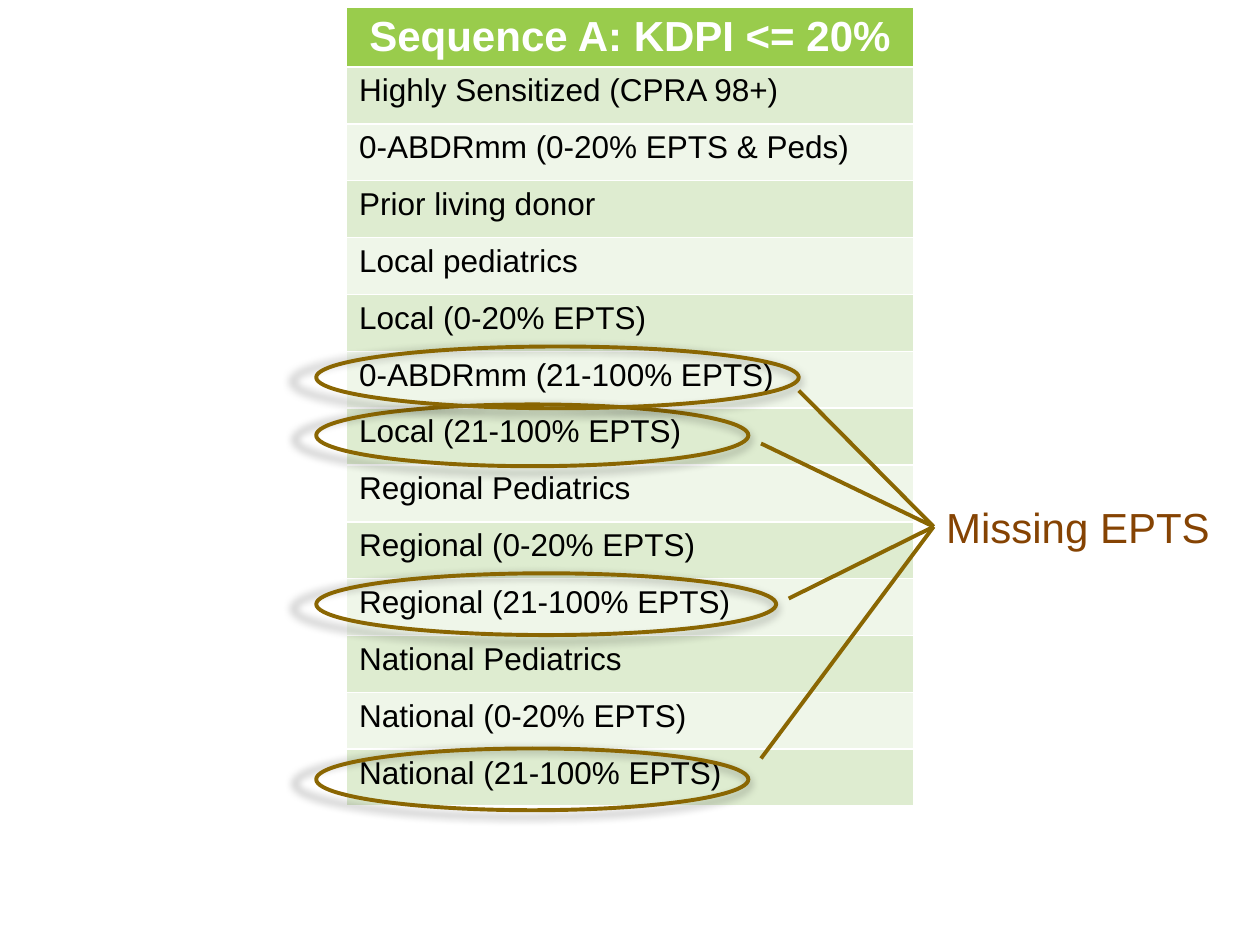
from pptx import Presentation
from pptx.dml.color import RGBColor
from pptx.enum.shapes import MSO_CONNECTOR as Connector, MSO_SHAPE as Shape
from pptx.enum.text import MSO_AUTO_SIZE as AutoSize, PP_ALIGN as Align
from pptx.oxml import parse_xml
from pptx.oxml.ns import nsdecls
from pptx.util import Inches, Pt

WHITE = RGBColor(0xFF, 0xFF, 0xFF)
BLACK = RGBColor(0, 0, 0)
GREEN = RGBColor(0x99, 0xCC, 0x4C)
BANDS = RGBColor(0xDE, 0xEC, 0xD0), RGBColor(0xEF, 0xF6, 0xE9)
GOLD = RGBColor(0x8A, 0x66, 0x02)
BROWN = RGBColor(0x85, 0x43, 0x03)
FONT = "Arial"

HEADER = "Sequence A: KDPI <= 20%"
CATEGORIES = [
    "Highly Sensitized (CPRA 98+)",
    "0-ABDRmm (0-20% EPTS & Peds)",
    "Prior living donor",
    "Local pediatrics",
    "Local (0-20% EPTS)",
    "0-ABDRmm (21-100% EPTS)",
    "Local (21-100% EPTS)",
    "Regional Pediatrics",
    "Regional (0-20% EPTS)",
    "Regional (21-100% EPTS)",
    "National Pediatrics",
    "National (0-20% EPTS)",
    "National (21-100% EPTS)",
]
OVALS = [(3.21, 3.43), (4.55, 3.65), (5.94, 3.43), (2.75, 3.83)]
LINE_ENDS = [(6.34, 3.1), (6.04, 3.52), (6.26, 4.75), (6.04, 6.02)]
SHADOW = (
    f'<a:effectLst {nsdecls("a")}>'
    '<a:outerShdw blurRad="63500" dist="38100" dir="5400000" '
    'sx="105000" sy="105000" algn="br" rotWithShape="0">'
    '<a:srgbClr val="000000"><a:alpha val="30000"/></a:srgbClr>'
    '</a:outerShdw></a:effectLst>'
)


def add_text(para, text, size, color, bold=False):
    run = para.add_run()
    run.text = text
    run.font.name = FONT
    run.font.size = Pt(size)
    run.font.bold = bold
    run.font.color.rgb = color


def fill_cell(cell, color):
    cell.fill.solid()
    cell.fill.fore_color.rgb = color
    return cell.text_frame.paragraphs[0]


def add_sequence_table(page, left, top, width, height):
    count = len(CATEGORIES) + 1
    table = page.shapes.add_table(count, 1, left, top, width, height).table
    para = fill_cell(table.cell(0, 0), GREEN)
    para.alignment = Align.CENTER
    add_text(para, HEADER, 24, WHITE, bold=True)
    for index, category in enumerate(CATEGORIES):
        para = fill_cell(table.cell(index + 1, 0), BANDS[index % 2])
        add_text(para, category, 18, BLACK)


def style_line(line):
    line.color.rgb = GOLD
    line.width = Pt(2.25)


def add_oval(group, left, top, width, height):
    oval = group.shapes.add_shape(Shape.OVAL, left, top, width, height)
    oval.fill.background()
    style_line(oval.line)
    oval._element.spPr.append(parse_xml(SHADOW))


def add_callout(group, left, top, width, height):
    box = group.shapes.add_textbox(left, top, width, height)
    frame = box.text_frame
    frame.word_wrap = False
    frame.auto_size = AutoSize.SHAPE_TO_FIT_TEXT
    add_text(frame.paragraphs[0], "Missing EPTS", 24, BROWN)
    for end_x, end_y in LINE_ENDS:
        line = group.shapes.add_connector(
            Connector.STRAIGHT, left, top + height // 2, Inches(end_x), Inches(end_y))
        style_line(line.line)
        line._element.spPr.append(parse_xml(f'<a:effectLst {nsdecls("a")}/>'))


def main():
    deck = Presentation()
    deck.slide_width, deck.slide_height = Inches(10), Inches(7.5)
    page = deck.slides.add_slide(deck.slide_layouts[6])
    add_sequence_table(page, Inches(2.75), Inches(0.06), Inches(4.5), Inches(6.32))
    group = page.shapes.add_group_shape()
    for top, width in OVALS:
        add_oval(group, Inches(2.51), Inches(top), Inches(width), Inches(0.49))
    add_callout(group, Inches(7.41), Inches(3.93), Inches(2.32), Inches(0.5))
    deck.save("out.pptx")


if __name__ == "__main__":
    main()
